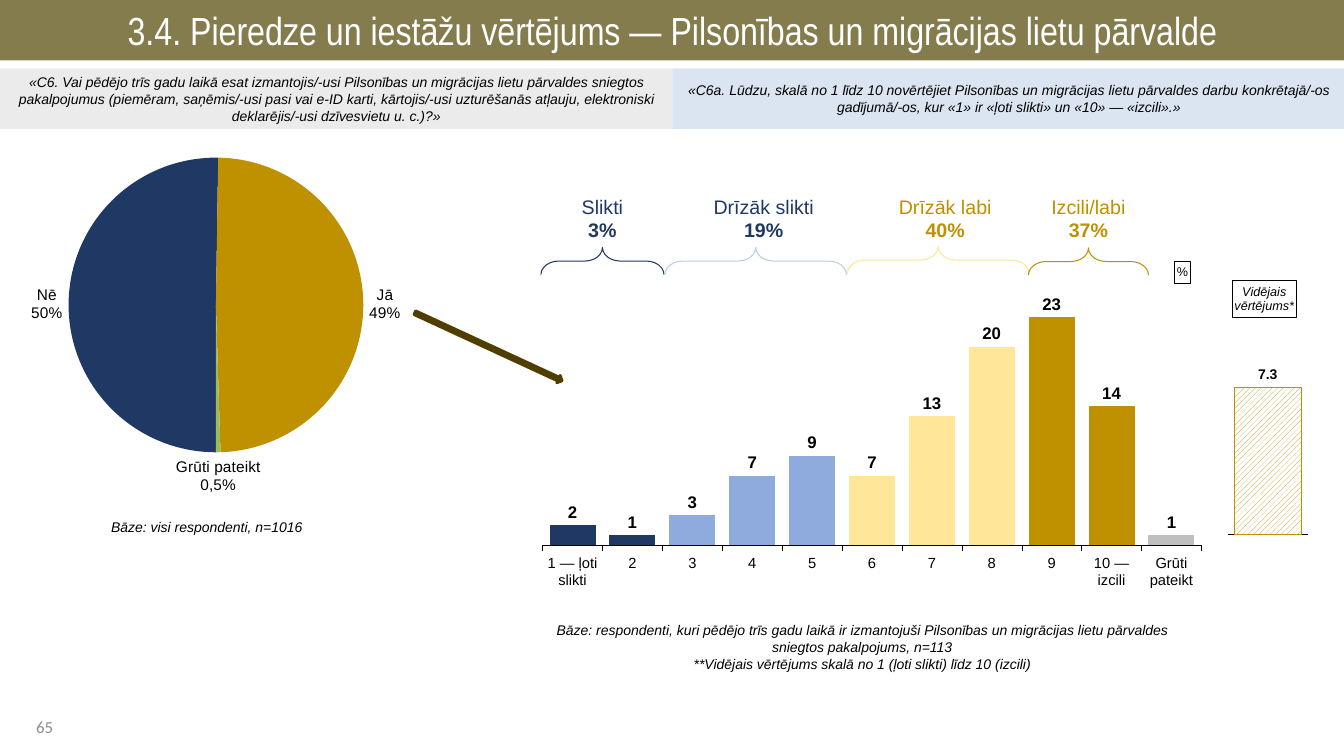
from dataclasses import dataclass
from typing import NamedTuple, Optional

from lxml.etree import SubElement
from pptx import Presentation
from pptx.chart.chart import Chart
from pptx.chart.data import CategoryChartData
from pptx.dml.color import RGBColor
from pptx.enum.chart import XL_CHART_TYPE, XL_LABEL_POSITION, XL_TICK_LABEL_POSITION, XL_TICK_MARK
from pptx.enum.dml import MSO_PATTERN
from pptx.enum.shapes import MSO_SHAPE
from pptx.enum.text import MSO_ANCHOR, PP_ALIGN
from pptx.oxml.ns import qn
from pptx.util import Inches, Pt


@dataclass(frozen=True)
class Theme:
    olive: str = "857C4D"
    grey: str = "D9D9D9"
    pale_blue: str = "B9CDE5"
    navy: str = "203864"
    blue: str = "8FAADC"
    cream: str = "FFE699"
    gold: str = "BF9000"
    silver: str = "BFBFBF"
    green: str = "9BBB59"
    brown: str = "503D00"
    page_grey: str = "8C8C8C"
    black: str = "000000"
    white: str = "FFFFFF"
    font: str = "Arial"
    title_size: float = 28
    group_size: float = 14
    value_size: float = 12
    pie_size: float = 11
    axis_size: float = 10.5
    note_size: float = 10
    small_size: float = 9


THEME = Theme()


class Box(NamedTuple):
    left: float
    top: float
    width: float
    height: float

    def inches(self) -> list:
        return [Inches(value) for value in self]


class Style(NamedTuple):
    size: float
    color: str = THEME.black
    bold: bool = False
    italic: bool = False
    font: str = THEME.font


class Banner(NamedTuple):
    box: Box
    fill: str
    opacity: int
    text: str
    style: Style


class RatingGroup(NamedTuple):
    name: str
    share: str
    color: str
    label_left: float
    brace_color: str
    brace: Box


NOTE = Style(THEME.note_size, italic=True)


def rgb(color: str) -> RGBColor:
    return RGBColor.from_string(color)


def apply_font(font, style: Style) -> None:
    font.name, font.size = style.font, Pt(style.size)
    font.bold, font.italic = style.bold, style.italic
    font.color.rgb = rgb(style.color)


def write_lines(frame, lines: list[tuple[str, Style]], align=PP_ALIGN.CENTER) -> None:
    for index, (text, style) in enumerate(lines):
        paragraph = frame.add_paragraph() if index else frame.paragraphs[0]
        paragraph.alignment = align
        run = paragraph.add_run()
        run.text = text
        apply_font(run.font, style)


def add_text(slide, box: Box, lines: list[tuple[str, Style]], anchor=MSO_ANCHOR.MIDDLE, align=PP_ALIGN.CENTER):
    frame = slide.shapes.add_textbox(*box.inches()).text_frame
    frame.word_wrap = True
    frame.vertical_anchor = anchor
    write_lines(frame, lines, align)
    return frame


def add_outline(slide, preset, box: Box, fill: Optional[str], line: Optional[str], width: float = 0.75):
    shape = slide.shapes.add_shape(preset, *box.inches())
    shape.shadow.inherit = False
    if fill:
        shape.fill.solid()
        shape.fill.fore_color.rgb = rgb(fill)
    else:
        shape.fill.background()
    if line:
        shape.line.color.rgb = rgb(line)
        shape.line.width = Pt(width)
    else:
        shape.line.fill.background()
    return shape


def add_banner(slide, banner: Banner) -> None:
    shape = add_outline(slide, MSO_SHAPE.RECTANGLE, banner.box, banner.fill, None)
    if banner.opacity < 100:
        color = shape.fill._xPr.find(".//" + qn("a:srgbClr"))
        SubElement(color, qn("a:alpha"), val=str(banner.opacity * 1000))
    shape.text_frame.word_wrap = True
    shape.text_frame.vertical_anchor = MSO_ANCHOR.MIDDLE
    write_lines(shape.text_frame, [(banner.text, banner.style)])


def add_rating_group(slide, group: RatingGroup) -> None:
    brace = add_outline(slide, MSO_SHAPE.LEFT_BRACE, group.brace, None, group.brace_color)
    brace.rotation = 90
    brace.adjustments[0] = 0.65
    name_style = Style(THEME.group_size, group.color)
    lines = [(group.name, name_style), (group.share, name_style._replace(bold=True))]
    add_text(slide, Box(group.label_left, 1.88, 1.65, 0.57), lines, MSO_ANCHOR.TOP)


def set_layout(parent, position: int, values: dict[str, float], inner: bool = False) -> None:
    for old in parent.findall(qn("c:layout")):
        parent.remove(old)
    layout = parent.makeelement(qn("c:layout"), {})
    parent.insert(position, layout)
    manual = SubElement(layout, qn("c:manualLayout"))
    if inner:
        SubElement(manual, qn("c:layoutTarget"), val="inner")
    for axis in "xy":
        SubElement(manual, qn(f"c:{axis}Mode"), val="edge")
    for key, value in values.items():
        SubElement(manual, qn(f"c:{key}"), val=str(value))


def add_chart(slide, kind, box: Box, categories: list[str], values: list[float], style: Style, plot: Box) -> Chart:
    data = CategoryChartData()
    data.categories = categories
    data.add_series("Series 1", values)
    chart = slide.shapes.add_chart(kind, *box.inches(), data).chart
    chart.has_legend = chart.has_title = False
    apply_font(chart.font, style)
    set_layout(chart._chartSpace.chart.plotArea, 0, dict(zip("xywh", plot)), True)
    return chart


def set_labels(chart: Chart, style: Style, number_format: str):
    labels = chart.plots[0].series[0].data_labels
    labels.show_value = True
    labels.position = XL_LABEL_POSITION.OUTSIDE_END
    labels.number_format, labels.number_format_is_linked = number_format, False
    apply_font(labels.font, style)
    return labels


def color_points(chart: Chart, colors: list[str]) -> None:
    for index, color in enumerate(colors):
        fill = chart.plots[0].series[0].points[index].format.fill
        fill.solid()
        fill.fore_color.rgb = rgb(color)


def format_columns(chart: Chart, maximum: float, gap: int) -> None:
    chart.plots[0].vary_by_categories = False
    chart.plots[0].gap_width = gap
    value_axis, category_axis = chart.value_axis, chart.category_axis
    value_axis.minimum_scale, value_axis.maximum_scale = 0, maximum
    value_axis.has_major_gridlines = False
    value_axis.visible = False
    category_axis.format.line.color.rgb = rgb(THEME.black)
    category_axis.format.line.width = Pt(0.25)


def add_boxed_title(chart: Chart, text: str, style: Style, x: float, y: float) -> None:
    title = chart.chart_title
    write_lines(title.text_frame, [(text, style)])
    title.format.fill.solid()
    title.format.fill.fore_color.rgb = rgb(THEME.white)
    title.format.line.color.rgb = rgb(THEME.black)
    title.format.line.width = Pt(0.75)
    set_layout(title._element, 1, {"x": x, "y": y})
    title._element.find(qn("c:overlay")).set("val", "1")


def add_rating_chart(slide) -> None:
    categories = ["1 — ļoti slikti", *map(str, range(2, 10)), "10 — izcili", "Grūti pateikt"]
    style = Style(THEME.small_size)
    chart = add_chart(slide, XL_CHART_TYPE.COLUMN_CLUSTERED, Box(5.38, 2.46, 6.67, 3.39), categories,
                      [2, 1, 3, 7, 9, 7, 13, 20, 23, 14, 1], style, Box(0, 0, 0.98, 0.87))
    format_columns(chart, 30, 30)
    apply_font(chart.category_axis.tick_labels.font, Style(THEME.axis_size))
    set_labels(chart, Style(THEME.value_size, bold=True), "0")
    color_points(chart, [THEME.navy] * 2 + [THEME.blue] * 3 + [THEME.cream] * 3 + [THEME.gold] * 2 + [THEME.silver])
    add_boxed_title(chart, "%", style, 0.94, 0.04)


def add_usage_pie(slide) -> None:
    style = Style(THEME.pie_size)
    chart = add_chart(slide, XL_CHART_TYPE.PIE, Box(-0.25, 1.53, 4.6, 3.44), ["Nē", "Jā", "Grūti pateikt"],
                      [50, 49, 0.5], style, Box(0.2, 0.01, 0.64, 0.85))
    plot = chart.plots[0]
    plot.vary_by_categories = True
    SubElement(plot._element, qn("c:firstSliceAng"), val="180")
    labels = set_labels(chart, style, "0%")
    labels.show_value = False
    labels.show_percentage = labels.show_category_name = True
    separator = labels._element.makeelement(qn("c:separator"), {})
    separator.text = "\n"
    labels._element.find(qn("c:showBubbleSize")).addnext(separator)
    color_points(chart, [THEME.navy, THEME.gold, THEME.green])
    unsure = plot.series[0].points[2].data_label
    write_lines(unsure.text_frame, [("Grūti pateikt", style), ("0,5%", style)])
    unsure.position = XL_LABEL_POSITION.OUTSIDE_END


def add_average_chart(slide) -> None:
    style = Style(THEME.note_size, bold=True)
    chart = add_chart(slide, XL_CHART_TYPE.COLUMN_CLUSTERED, Box(12.16, 2.3, 0.88, 3.03), ["1"], [7.3],
                      style, Box(0.02, 0, 0.9, 0.99))
    format_columns(chart, 15, 20)
    chart.category_axis.tick_label_position = XL_TICK_LABEL_POSITION.NONE
    chart.category_axis.major_tick_mark = XL_TICK_MARK.NONE
    set_labels(chart, style, "0.0")
    bar = chart.plots[0].series[0].format
    bar.fill.patterned()
    bar.fill.pattern = MSO_PATTERN.WIDE_UPWARD_DIAGONAL
    bar.fill.fore_color.rgb, bar.fill.back_color.rgb = rgb(THEME.gold), rgb(THEME.white)
    bar.line.color.rgb = rgb(THEME.gold)
    bar.line.width = Pt(0.25)
    add_boxed_title(chart, "Vidējais vērtējums*", Style(THEME.small_size, italic=True), 0.07, 0.16)


BANNERS = [
    Banner(Box(0, 0, 13.33, 0.6), THEME.olive, 100,
           "3.4. Pieredze un iestāžu vērtējums — Pilsonības un migrācijas lietu pārvalde",
           Style(THEME.title_size, THEME.white, font="Arial Narrow")),
    Banner(Box(0, 0.68, 6.67, 0.6), THEME.grey, 50,
           "«C6. Vai pēdējo trīs gadu laikā esat izmantojis/-usi Pilsonības un migrācijas lietu pārvaldes sniegtos "
           "pakalpojumus (piemēram, saņēmis/-usi pasi vai e-ID karti, kārtojis/-usi uzturēšanās atļauju, "
           "elektroniski deklarējis/-usi dzīvesvietu u. c.)?»", NOTE),
    Banner(Box(6.67, 0.68, 6.67, 0.6), THEME.pale_blue, 50,
           "«C6a. Lūdzu, skalā no 1 līdz 10 novērtējiet Pilsonības un migrācijas lietu pārvaldes darbu "
           "konkrētajā/-os gadījumā/-os, kur «1» ir «ļoti slikti» un «10» — «izcili».»", NOTE),
]
GROUPS = [
    RatingGroup("Slikti", "3%", THEME.navy, 5.15, THEME.navy, Box(5.84, 1.98, 0.27, 1.22)),
    RatingGroup("Drīzāk slikti", "19%", THEME.navy, 6.75, THEME.pale_blue, Box(7.36, 1.69, 0.27, 1.8)),
    RatingGroup("Drīzāk labi", "40%", THEME.gold, 8.55, THEME.cream, Box(9.17, 1.68, 0.27, 1.8)),
    RatingGroup("Izcili/labi", "37%", THEME.gold, 9.97, THEME.gold, Box(10.66, 2, 0.27, 1.19)),
]


def main() -> None:
    presentation = Presentation()
    presentation.slide_width, presentation.slide_height = Inches(13.33), Inches(7.5)
    slide = presentation.slides.add_slide(presentation.slide_layouts[6])

    # Page number, title and survey questions
    add_text(slide, Box(0.26, 7.03, 1.42, 0.36), [("65", Style(12, THEME.page_grey, font="Calibri"))],
             align=PP_ALIGN.LEFT)
    for banner in BANNERS:
        add_banner(slide, banner)

    # Sample notes
    rating_note = add_text(slide, Box(5.39, 6.35, 6.32, 0.47), [
        ("Bāze: respondenti, kuri pēdējo trīs gadu laikā ir izmantojuši Pilsonības un migrācijas lietu pārvaldes "
         "sniegtos pakalpojums, n=113", NOTE),
        ("**Vidējais vērtējums skalā no 1 (ļoti slikti) līdz 10 (izcili)", NOTE)])
    rating_note.margin_bottom = Inches(0.38)
    add_text(slide, Box(0.88, 4.97, 2.34, 0.52), [("Bāze: visi respondenti, n=1016", NOTE)])

    # Charts and the arrow from users to their ratings
    add_rating_chart(slide)
    add_usage_pie(slide)
    arrow = add_outline(slide, MSO_SHAPE.RIGHT_ARROW, Box(4.04, 3.4, 1.61, 0.08), THEME.brown, THEME.brown, 2)
    arrow.rotation = 24.8
    add_average_chart(slide)

    # Rating groups above the columns
    for group in GROUPS:
        add_rating_group(slide, group)
    presentation.save("out.pptx")


if __name__ == "__main__":
    main()
